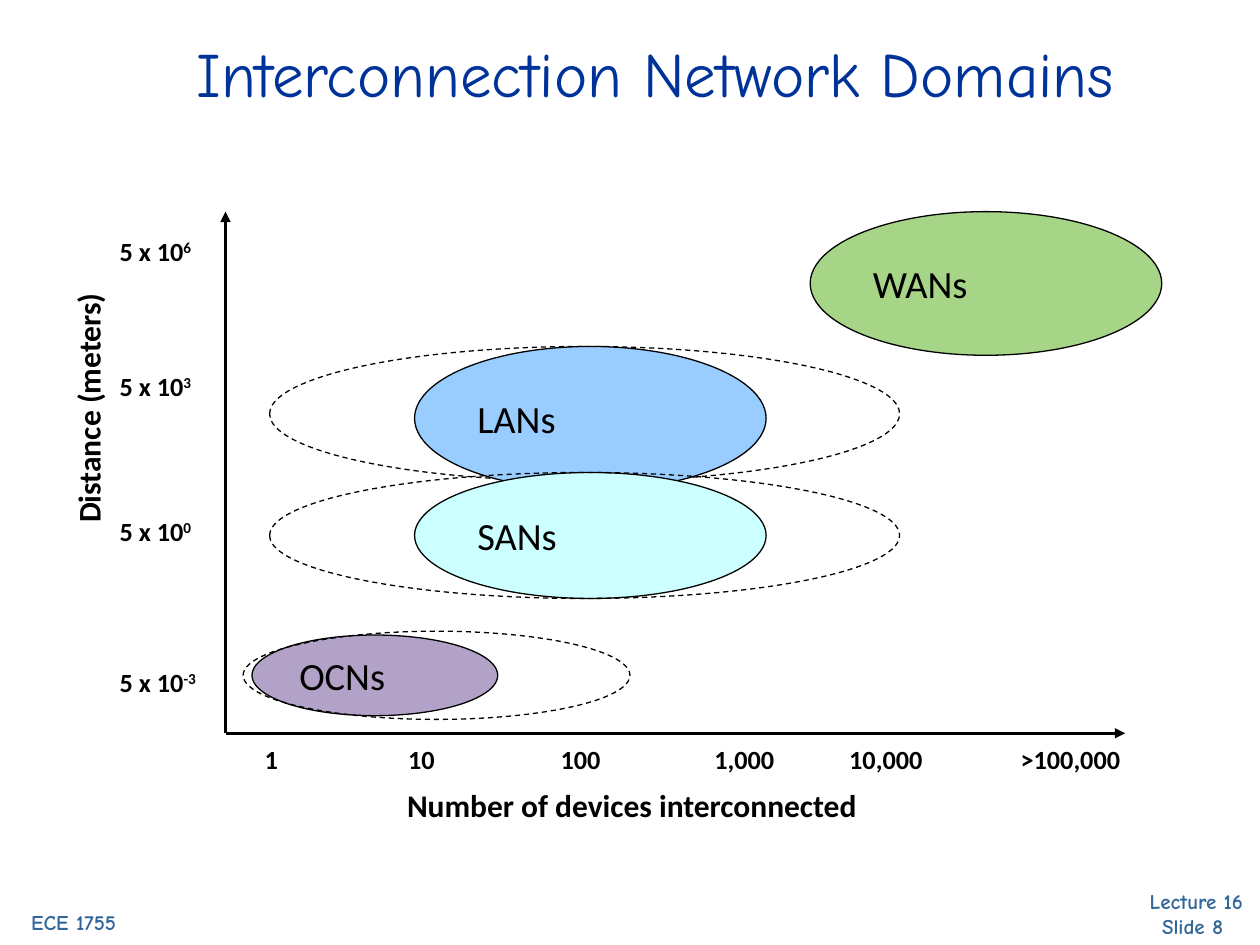
import pptx
import pptx.dml.color
import pptx.enum.dml
import pptx.enum.shapes
import pptx.enum.text
import pptx.oxml
import pptx.oxml.ns
import pptx.util
from dataclasses import dataclass

Inches = pptx.util.Inches
Pt = pptx.util.Pt
RGB = pptx.dml.color.RGBColor.from_string
ALIGN = pptx.enum.text.PP_ALIGN
ANCHOR = pptx.enum.text.MSO_ANCHOR


@dataclass(frozen=True)
class Theme:
    """Fonts, colours and type sizes of the slide."""
    display: str = "Comic Neue"
    body: str = "Calibri"
    title: str = "003399"
    footer: str = "336699"
    ink: str = "000000"
    wan: str = "A7D588"
    lan: str = "99CCFF"
    san: str = "CCFFFF"
    ocn: str = "B3A2C7"
    title_size: int = 36
    domain_size: int = 22
    axis_size: int = 18
    tick_size: int = 15
    footer_size: int = 12


THEME = Theme()


def write(tf, text, size, font=THEME.body, color=THEME.ink, bold=False,
          align=ALIGN.LEFT, anchor=ANCHOR.TOP, inset=(0.09, 0.05), wrap=False, sup=""):
    """Fill a text frame with one formatted paragraph and an optional superscript."""
    tf.word_wrap = wrap
    tf.vertical_anchor = anchor
    tf.margin_left = tf.margin_right = Inches(inset[0])
    tf.margin_top = tf.margin_bottom = Inches(inset[1])
    p = tf.paragraphs[0]
    p.alignment = align
    p.text = text.replace("\n", "\v")
    if sup:
        r = p.add_run()
        r.text = sup
        r.font._element.set("baseline", "30000")
    for r in p.runs:
        r.font.size = Pt(size)
        r.font.name = font
        r.font.bold = bold
        r.font.color.rgb = RGB(color)


def add_label(s, text, left, top, width, height, rotation=0, **style):
    """Add a text box that grows with its text."""
    sp = s.shapes.add_textbox(Inches(left), Inches(top), Inches(width), Inches(height))
    sp.rotation = rotation
    write(sp.text_frame, text, **style)
    sp.text_frame.auto_size = pptx.enum.text.MSO_AUTO_SIZE.SHAPE_TO_FIT_TEXT


def add_ellipse(s, left, top, width, height, fill=None, text=""):
    """Add a filled domain with its name, or a dashed range when there is no fill."""
    sp = s.shapes.add_shape(pptx.enum.shapes.MSO_SHAPE.OVAL, Inches(left), Inches(top),
                            Inches(width), Inches(height))
    sp.shadow.inherit = False
    sp.line.color.rgb = RGB(THEME.ink)
    sp.line.width = Pt(0.75)
    if fill:
        sp.fill.solid()
        sp.fill.fore_color.rgb = RGB(fill)
        write(sp.text_frame, text, THEME.domain_size, anchor=ANCHOR.MIDDLE)
    else:
        sp.fill.background()
        sp.line.dash_style = pptx.enum.dml.MSO_LINE.DASH


def add_axis(s, x1, y1, x2, y2):
    """Add a straight axis with an arrowhead at its far end."""
    c = s.shapes.add_connector(pptx.enum.shapes.MSO_CONNECTOR.STRAIGHT,
                               Inches(x1), Inches(y1), Inches(x2), Inches(y2))
    c.line.color.rgb = RGB(THEME.ink)
    c.line.width = Pt(1.5)
    qn = pptx.oxml.ns.qn
    tail = c.line._get_or_add_ln().makeelement(qn("a:tailEnd"), {"type": "triangle"})
    c.line._get_or_add_ln().append(tail)
    spPr = c._element.spPr
    spPr.append(spPr.makeelement(qn("a:effectLst"), {}))


def add_title(s, text):
    """Place and format the title placeholder."""
    sp = s.shapes.title
    sp.left, sp.top, sp.width, sp.height = map(Inches, (0.73, 0.27, 8.94, 0.74))
    write(sp.text_frame, text, THEME.title_size, font=THEME.display, color=THEME.title,
          align=ALIGN.CENTER, inset=(0, 0), wrap=True)


def add_footers(s):
    """Add the course and slide labels at the bottom."""
    style = dict(size=THEME.footer_size, font=THEME.display, color=THEME.footer,
                 bold=True, align=ALIGN.CENTER, inset=(0.1, 0.05), wrap=True)
    add_label(s, "Lecture 16\nSlide 8 ", 8.83, 7, 1.33, 0.5, **style)
    add_label(s, "ECE 1755", -0.08, 7.17, 1.33, 0.3, **style)


def add_axes(s):
    """Add both axes with their titles and tick labels."""
    left, bottom = 1.79, 5.82
    add_axis(s, left, bottom, left, 1.68)
    add_axis(s, left, bottom, 8.93, bottom)
    name = dict(size=THEME.axis_size, bold=True)
    add_label(s, "Distance (meters)", -0.31, 3.03, 2.02, 0.4, rotation=270, **name)
    add_label(s, "Number of devices interconnected", 3.14, 6.19, 3.79, 0.4, **name)
    tick = dict(size=THEME.tick_size, bold=True)
    for power, top, width in (("-3", 5.24, 0.81), ("0", 4.04, 0.77),
                              ("3", 2.89, 0.77), ("6", 1.82, 0.77)):
        add_label(s, "5 x 10", 0.86, top, width, 0.35, sup=power, **tick)
    for text, x, width in (("1", 2.01, 0.29), ("10", 3.15, 0.4), ("100", 4.36, 0.5),
                           ("1,000", 5.58, 0.66), ("10,000", 6.65, 0.77),
                           (">100,000", 8.01, 0.98)):
        add_label(s, text, x, 5.85, width, 0.35, **tick)


def main():
    """Build and save the slide."""
    prs = pptx.Presentation()
    prs.slide_width, prs.slide_height = Inches(10), Inches(7.5)
    s = prs.slides.add_slide(prs.slide_layouts[5])
    add_footers(s)
    add_title(s, "Interconnection Network Domains")
    add_ellipse(s, 2.14, 2.75, 5, 1.07)
    add_ellipse(s, 3.29, 2.75, 2.79, 1.14, THEME.lan, "LANs")
    add_axes(s)
    add_ellipse(s, 2, 5.04, 1.95, 0.64, THEME.ocn, "OCNs")
    add_ellipse(s, 3.29, 3.75, 2.79, 1, THEME.san, "SANs")
    add_ellipse(s, 2.14, 3.75, 5, 1)
    add_ellipse(s, 6.43, 1.68, 2.79, 1.14, THEME.wan, "WANs")
    add_ellipse(s, 1.93, 5.01, 3.07, 0.7)
    prs.save("out.pptx")


if __name__ == "__main__":
    main()
